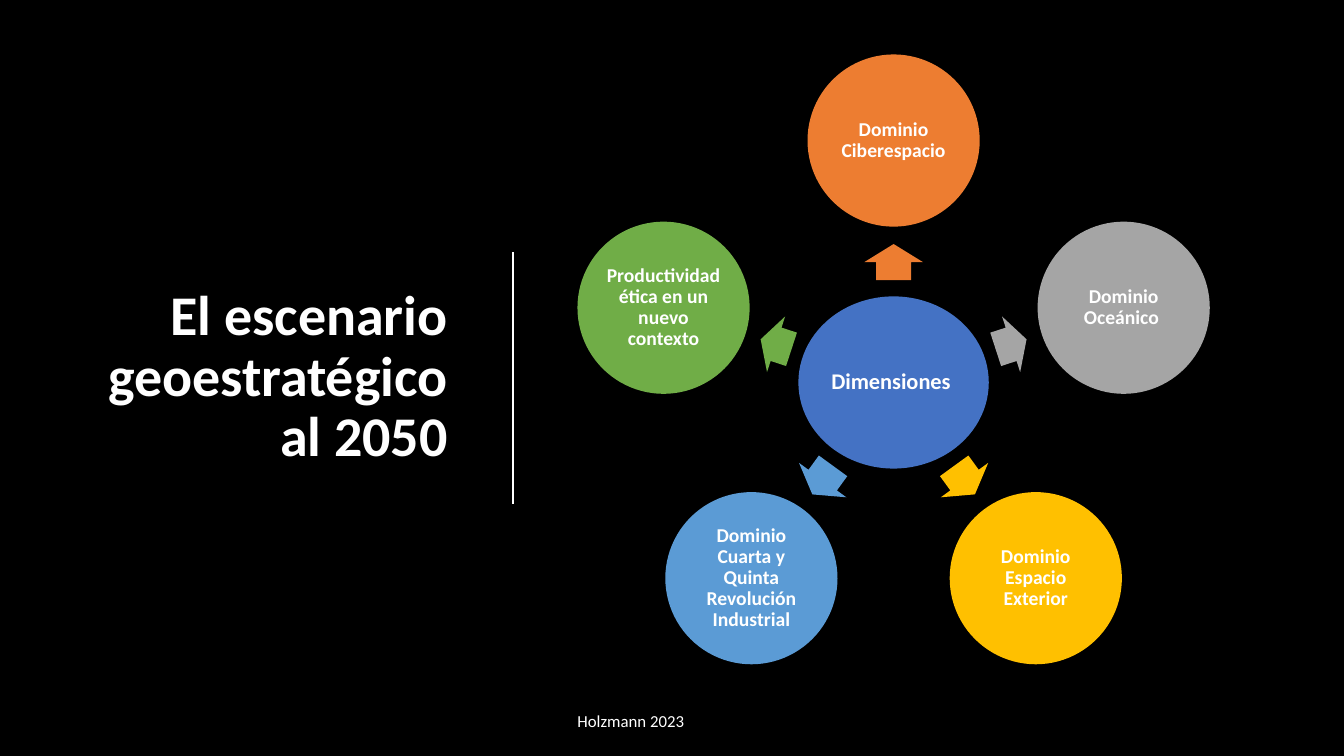
"""Build the slide on the dimensions of the 2050 geostrategic scenario."""
import math

import pptx
import pptx.dml.color
import pptx.enum.shapes
import pptx.enum.text
import pptx.util
from lxml import etree

Pt = pptx.util.Pt
SHAPES = pptx.enum.shapes.MSO_SHAPE
ALIGN = pptx.enum.text.PP_ALIGN
MIDDLE = pptx.enum.text.MSO_ANCHOR.MIDDLE

TITLE = "El escenario geoestratégico al 2050"
SOURCE = "Holzmann 2023"
HUB = ("Dimensiones ", "4472C4")
DOMAINS = [
    ("Dominio Ciberespacio", "ED7D31", 25.8, 86),
    ("Dominio Oceánico ", "A5A5A5", 23.2, 88.3),
    ("Dominio Espacio Exterior", "FFC000", 25.2, 86.2),
    ("Dominio Cuarta y Quinta Revolución Industrial", "5B9BD5", 25.2, 86.2),
    ("Productividad ética en un nuevo contexto", "70AD47", 23.2, 88.3),
]
WHITE = "FFFFFF"
CENTER_X, CENTER_Y = 638.3, 273.2
ORBIT = 172.8
CIRCLE = 123
HUB_WIDTH = 136
ARROW_HEIGHT = 41.8


def color(value):
    return pptx.dml.color.RGBColor.from_string(value)


def write(shape, text, size, alignment, bold=True, spacing=None):
    frame = shape.text_frame
    frame.word_wrap = True
    frame.vertical_anchor = MIDDLE
    frame.text = text
    paragraph = frame.paragraphs[0]
    paragraph.alignment = alignment
    paragraph.line_spacing = spacing
    paragraph.font.name = "Calibri"
    paragraph.font.size = Pt(size)
    paragraph.font.bold = bold
    paragraph.font.color.rgb = color(WHITE)


def add_centered(slide, kind, x, y, width, height, fill):
    shape = slide.shapes.add_shape(
        kind, Pt(x - width / 2), Pt(y - height / 2), Pt(width), Pt(height))
    shape.shadow.inherit = False
    shape.fill.solid()
    shape.fill.fore_color.rgb = color(fill)
    shape.line.fill.background()
    return shape


def add_ellipse(slide, x, y, width, text, size, fill):
    ellipse = add_centered(slide, SHAPES.OVAL, x, y, width, CIRCLE, fill)
    frame = ellipse.text_frame
    frame.margin_left = frame.margin_right = Pt(1.4)
    frame.margin_top = frame.margin_bottom = Pt(1.4)
    write(ellipse, text, size, ALIGN.CENTER, spacing=0.9)


def add_domain(slide, index, text, fill, arrow_length, arrow_distance):
    degrees = 72 * index - 90
    across, down = math.cos(math.radians(degrees)), math.sin(math.radians(degrees))
    arrow = add_centered(
        slide, SHAPES.RIGHT_ARROW,
        CENTER_X + arrow_distance * across, CENTER_Y + arrow_distance * down,
        arrow_length, ARROW_HEIGHT, fill)
    arrow.adjustments[0] = 0.6
    arrow.adjustments[1] = 0.5
    arrow.rotation = degrees % 360
    add_ellipse(slide, CENTER_X + ORBIT * across, CENTER_Y + ORBIT * down,
                CIRCLE, text, 14, fill)


def main():
    presentation = pptx.Presentation()
    presentation.slide_width, presentation.slide_height = Pt(960), Pt(540)
    slide = presentation.slides.add_slide(presentation.slide_layouts[5])
    slide.background.fill.solid()
    slide.background.fill.fore_color.rgb = color("000000")

    title = slide.shapes.title
    title.left, title.top, title.width, title.height = Pt(66), Pt(84), Pt(261), Pt(372)
    write(title, TITLE, 40, ALIGN.RIGHT, spacing=0.9)

    divider = slide.shapes.add_connector(
        pptx.enum.shapes.MSO_CONNECTOR.STRAIGHT, Pt(366.5), Pt(180), Pt(366.5), Pt(360))
    divider.line.color.rgb = color(WHITE)
    divider.line.width = Pt(1.25)
    etree.SubElement(divider.element.spPr, pptx.oxml.ns.qn("a:effectLst"))

    source = slide.shapes.add_textbox(Pt(405.4), Pt(500.4), Pt(405.4), Pt(28.8))
    write(source, SOURCE, 12, ALIGN.LEFT, bold=False)
    source.text_frame.paragraphs[0].space_after = Pt(6)

    add_ellipse(slide, CENTER_X, CENTER_Y, HUB_WIDTH, HUB[0], 16, HUB[1])
    for index, domain in enumerate(DOMAINS):
        add_domain(slide, index, *domain)

    presentation.save("out.pptx")


if __name__ == "__main__":
    main()
